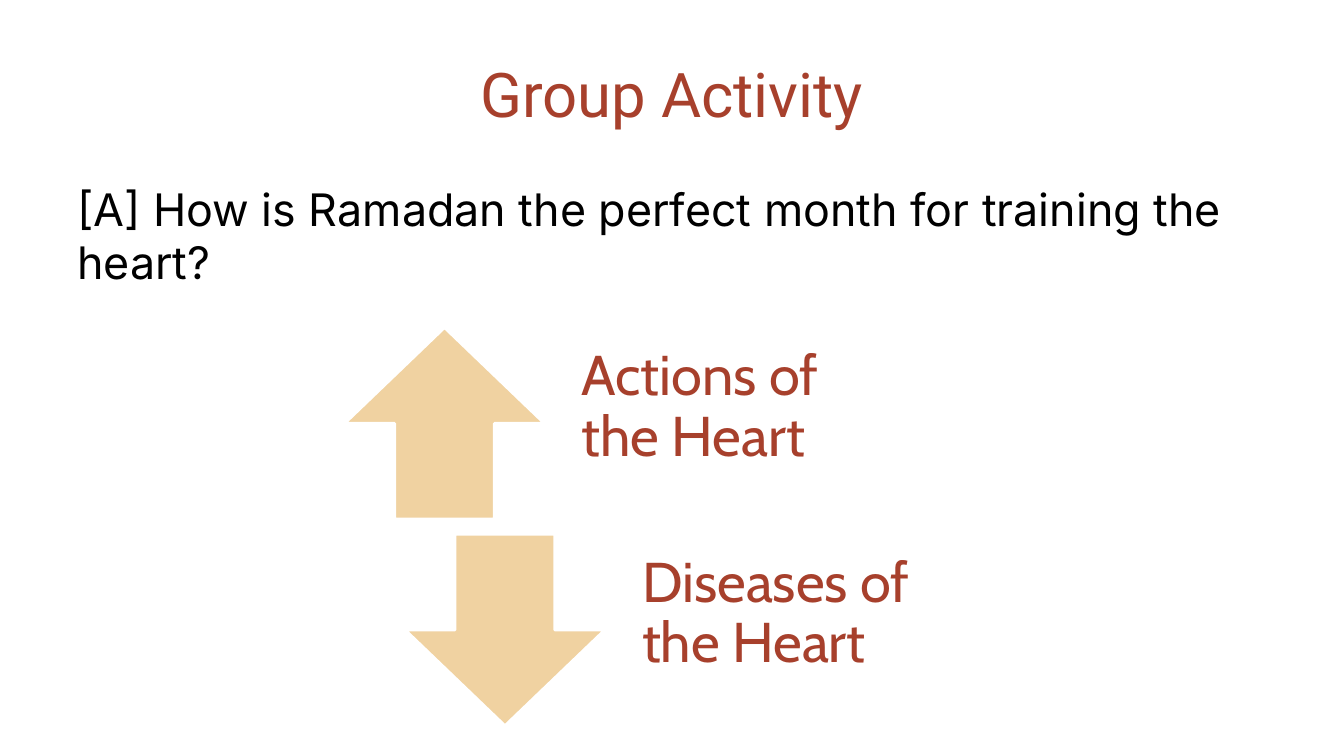
from dataclasses import dataclass

from pptx import Presentation, util as u
from pptx.dml.color import RGBColor
from pptx.enum import shapes, text

COLS, ROWS = 40, 30
WIDTH, HEIGHT = u.Inches(13.33), u.Inches(7.5)
RUST, SAND, BLACK, WHITE = "A7402C", "F0D2A1", "000000", "FFFFFF"
Kind = shapes.MSO_SHAPE
Anchor = text.MSO_ANCHOR
Align = text.PP_ALIGN


@dataclass
class Box:
    """A place on the grid, in columns and rows."""
    col: float
    row: float
    wide: float
    high: float

    def shift(self, cols: float, rows: float) -> "Box":
        return Box(self.col + cols, self.row + rows, self.wide, self.high)

    def place(self) -> tuple[int, ...]:
        x, y = WIDTH / COLS, HEIGHT / ROWS
        return (round(self.col * x), round(self.row * y),
                round(self.wide * x), round(self.high * y))


@dataclass
class Trend:
    kind: Kind
    label: str


TITLE = Box(2, 1.2, 36, 5)
BODY = Box(2, 7, 36, 19.8)
ARROW = Box(10.26, 13, 5.94, 7.6)
LABEL = Box(16.38, 13, 10.08, 7.6)
STEP = (1.8, 8.2)
TRENDS = [
    Trend(Kind.UP_ARROW, "Actions of the Heart"),
    Trend(Kind.DOWN_ARROW, "Diseases of the Heart"),
]


def tint(code: str) -> RGBColor:
    return RGBColor.from_string(code)


def write(home, box: Box, words: str, *, font: str, size: float,
          color: str = RUST, anchor=Anchor.MIDDLE, align=Align.LEFT,
          pitch: float = 1.0, inset=(0.1, 0.05, 0.1, 0.05)) -> None:
    """Add a text box; inset is left, top, right, bottom in inches."""
    frame = home.add_textbox(*box.place()).text_frame
    frame.word_wrap = True
    frame.vertical_anchor = anchor
    (frame.margin_left, frame.margin_top,
     frame.margin_right, frame.margin_bottom) = map(u.Inches, inset)
    para = frame.paragraphs[0]
    para.alignment = align
    para.line_spacing = pitch
    run = para.add_run()
    run.text = words
    run.font.name = font
    run.font.size = u.Pt(size)
    run.font.color.rgb = tint(color)


def point(home, box: Box, kind: Kind) -> None:
    """Add a block arrow."""
    arrow = home.add_shape(kind, *box.place())
    arrow.shadow.inherit = False
    arrow.fill.solid()
    arrow.fill.fore_color.rgb = tint(SAND)
    arrow.line.color.rgb = tint(WHITE)
    arrow.line.width = u.Pt(2)


def main() -> None:
    deck = Presentation()
    deck.slide_width, deck.slide_height = WIDTH, HEIGHT
    slide = deck.slides.add_slide(deck.slide_layouts[6])
    write(slide.shapes, TITLE, "Group Activity", font="Roboto", size=44,
          align=Align.CENTER)
    write(slide.shapes, BODY,
          "[A] How is Ramadan the perfect month for training the heart?",
          font="Inter", size=32, color=BLACK, anchor=Anchor.TOP)
    group = slide.shapes.add_group_shape().shapes
    for i, trend in enumerate(TRENDS):
        move = [i * step for step in STEP]
        point(group, ARROW.shift(*move), trend.kind)
        write(group, LABEL.shift(*move), trend.label, font="Cabin", size=40,
              pitch=0.9, inset=(0.31, 0, 0.31, 0.31))
    deck.save("out.pptx")


if __name__ == "__main__":
    main()
